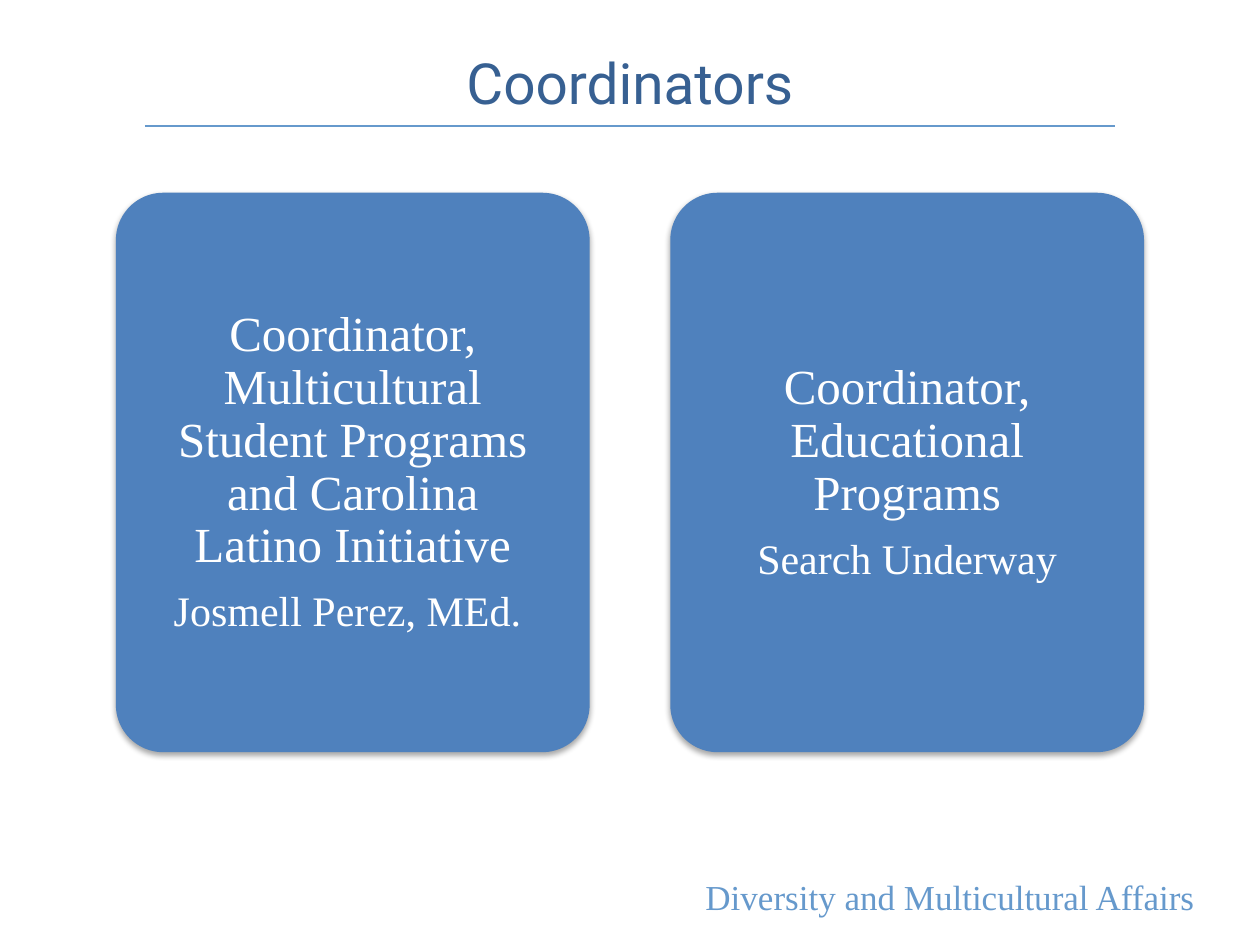
from lxml import etree
from pptx import Presentation
from pptx.dml.color import RGBColor
from pptx.enum.shapes import MSO_CONNECTOR as Connector, MSO_SHAPE as Shape
from pptx.enum.text import MSO_ANCHOR as Anchor, PP_ALIGN as Align
from pptx.oxml import parse_xml
from pptx.oxml.ns import nsdecls, qn
from pptx.util import Inches, Pt

SHADOW = (
    f'<a:outerShdw {nsdecls("a")} blurRad="{Pt(3.1)}" dist="{Pt(1.8)}" dir="5400000"'
    ' rotWithShape="0"><a:srgbClr val="000000"><a:alpha val="35000"/></a:srgbClr>'
    '</a:outerShdw>'
)


def color(value):
    return RGBColor.from_string(value)


class SlideBuilder:
    TITLE_FONT, BODY_FONT = "Roboto", "Times New Roman"
    TITLE_BLUE, ACCENT, CARD_BLUE, WHITE = "376092", "6699CC", "4F81BD", "FFFFFF"

    def __init__(self, slide):
        self.slide = slide

    def set_text(self, paragraph, text, size, font, hue, align):
        paragraph.text = text
        paragraph.alignment = align
        paragraph.font.size = Pt(size)
        paragraph.font.name = font
        paragraph.font.color.rgb = color(hue)

    def title(self, text, left, top, width, height):
        shape = self.slide.shapes.title
        shape.left, shape.top = Inches(left), Inches(top)
        shape.width, shape.height = Inches(width), Inches(height)
        frame = shape.text_frame
        frame.vertical_anchor = Anchor.MIDDLE
        self.set_text(frame.paragraphs[0], text, 32.4, self.TITLE_FONT,
                      self.TITLE_BLUE, Align.CENTER)

    def rule(self, left, right, y):
        line = self.slide.shapes.add_connector(
            Connector.STRAIGHT, Inches(left), Inches(y), Inches(right), Inches(y))
        line.line.color.rgb = color(self.ACCENT)
        line.line.width = Pt(0.75)
        etree.SubElement(line._element.spPr, qn("a:effectLst"))

    def footer(self, text, left, top, width, height):
        box = self.slide.shapes.add_textbox(
            Inches(left), Inches(top), Inches(width), Inches(height))
        frame = box.text_frame
        frame.word_wrap = True
        self.set_text(frame.paragraphs[0], text, 20, self.BODY_FONT,
                      self.ACCENT, Align.RIGHT)

    def card(self, role, person, left, top, width, height):
        shape = self.slide.shapes.add_shape(
            Shape.ROUNDED_RECTANGLE, Inches(left), Inches(top),
            Inches(width), Inches(height))
        shape.adjustments[0] = 0.1
        shape.fill.solid()
        shape.fill.fore_color.rgb = color(self.CARD_BLUE)
        shape.line.fill.background()
        shape.shadow.inherit = False
        shape._element.spPr.find(qn("a:effectLst")).append(parse_xml(SHADOW))

        frame = shape.text_frame
        frame.word_wrap = True
        frame.vertical_anchor = Anchor.MIDDLE
        frame.margin_left = frame.margin_right = Inches(0.23)
        frame.margin_top = frame.margin_bottom = Inches(0.23)
        rows = ((frame.paragraphs[0], role, 28), (frame.add_paragraph(), person, 24))
        for paragraph, text, size in rows:
            paragraph.line_spacing = 0.9
            paragraph.space_after = Pt(round(size * 0.35, 1))
            self.set_text(paragraph, text, size, self.BODY_FONT, self.WHITE, Align.CENTER)


def main():
    presentation = Presentation()
    presentation.slide_width, presentation.slide_height = Inches(10), Inches(7.5)
    title_only = presentation.slide_layouts[5]
    builder = SlideBuilder(presentation.slides.add_slide(title_only))

    # Heading and footer
    builder.rule(1.15, 8.85, 1)
    builder.footer("Diversity and Multicultural Affairs", 5.5, 6.9, 4.08, 0.44)
    builder.title("Coordinators", 0.5, 0.3, 9, 0.7)

    # Coordinator cards
    coordinators = (
        ("Coordinator, Multicultural Student Programs and Carolina Latino Initiative",
         "Josmell Perez, MEd. "),
        ("Coordinator, Educational Programs", "Search Underway"),
    )
    for column, (role, person) in enumerate(coordinators):
        builder.card(role, person, 0.92 + column * 4.4, 1.53, 3.76, 4.44)

    presentation.save("out.pptx")


if __name__ == "__main__":
    main()
